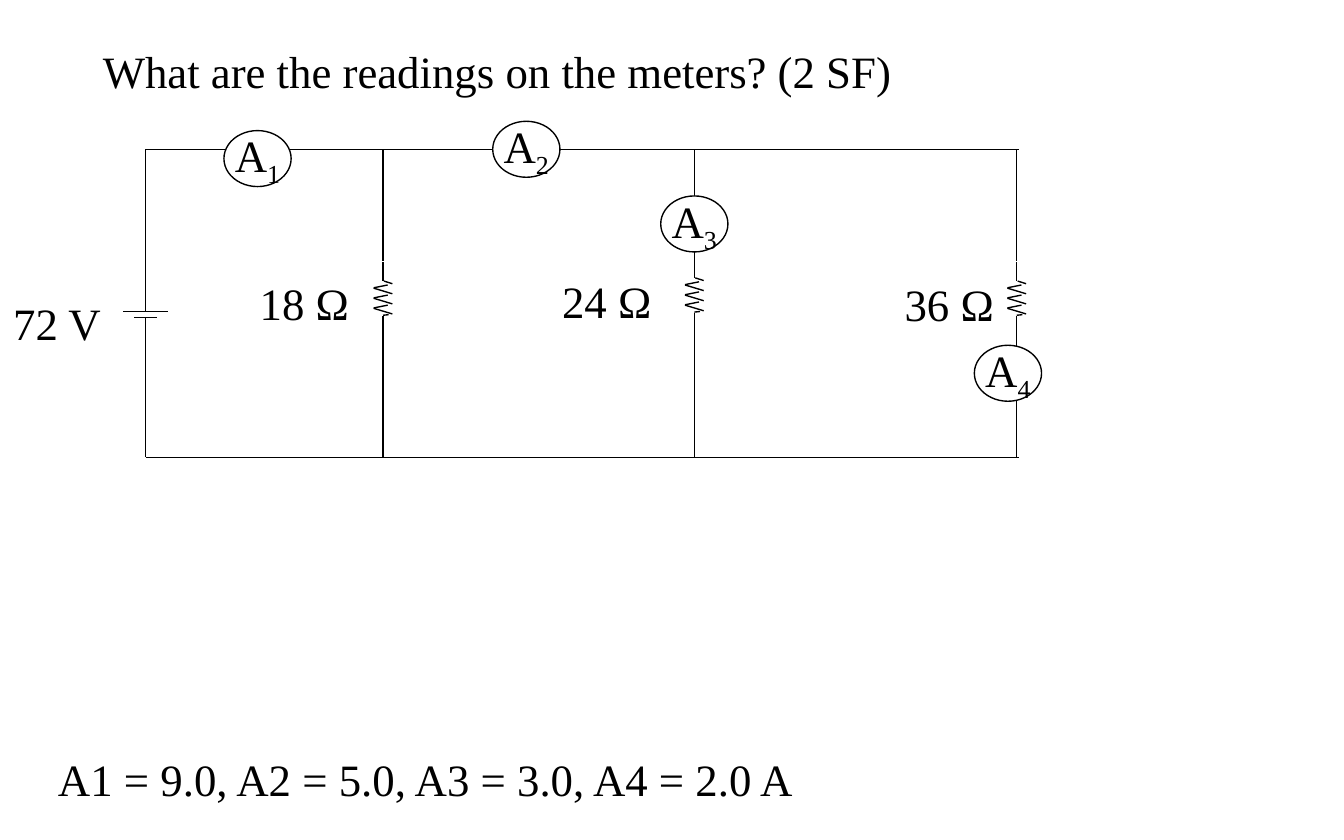
from dataclasses import dataclass

from lxml import etree
from pptx import Presentation
from pptx.dml.color import RGBColor
from pptx.enum.shapes import MSO_CONNECTOR, MSO_SHAPE
from pptx.enum.text import MSO_ANCHOR, MSO_AUTO_SIZE, PP_ALIGN
from pptx.oxml.ns import qn
from pptx.util import Pt

STRAIGHT = MSO_CONNECTOR.STRAIGHT
ELLIPSE = MSO_SHAPE.OVAL
MIDDLE = MSO_ANCHOR.MIDDLE
GROW = MSO_AUTO_SIZE.SHAPE_TO_FIT_TEXT
FIXED = MSO_AUTO_SIZE.NONE
CENTER = PP_ALIGN.CENTER


@dataclass(frozen=True)
class Theme:
    ink: RGBColor = RGBColor(0, 0, 0)
    paper: RGBColor = RGBColor(255, 255, 255)
    font: str = "Times New Roman"
    size: float = 24
    line: float = 0.75
    subscript: int = -25000


def apply(obj, values):
    for name, value in values.items():
        setattr(obj, name, value)


class Circuit:
    """Draws circuit elements on one slide, with lengths in points."""

    def __init__(self, slide, theme):
        self.s = slide
        self.theme = theme

    def run(self, p, text):
        r = p.add_run()
        r.text = text
        apply(r.font, {"name": self.theme.font, "size": Pt(self.theme.size)})
        r.font.color.rgb = self.theme.ink
        return r

    def stroke(self, line):
        line.color.rgb = self.theme.ink
        line.width = Pt(self.theme.line)

    def text(self, text, x, y, w, h=36.5):
        sp = self.s.shapes.add_textbox(Pt(x), Pt(y), Pt(w), Pt(h))
        tf = sp.text_frame
        apply(tf, {"word_wrap": False, "auto_size": GROW})
        self.run(tf.paragraphs[0], text)

    def wire(self, x1, y1, x2, y2):
        sp = self.s.shapes.add_connector(STRAIGHT, Pt(x1), Pt(y1), Pt(x2), Pt(y2))
        self.stroke(sp.line)
        etree.SubElement(sp._element.spPr, qn("a:effectLst"))

    def meter(self, number, x, y, w=36, h=30):
        """Ammeter: a circle with a subscripted A."""
        sp = self.s.shapes.add_shape(ELLIPSE, Pt(x), Pt(y), Pt(w), Pt(h))
        sp.shadow.inherit = False
        sp.fill.solid()
        sp.fill.fore_color.rgb = self.theme.paper
        self.stroke(sp.line)
        tf = sp.text_frame
        apply(tf, {"word_wrap": False, "auto_size": FIXED, "vertical_anchor": MIDDLE})
        p = tf.paragraphs[0]
        p.alignment = CENTER
        self.run(p, "A")
        r = self.run(p, str(number))
        r.font._element.set("baseline", str(self.theme.subscript))

    def resistor(self, x, y, turns=3, pitch=5.4):
        strokes = [(0, 0, 0, 10.1), (0.5, 10.1, 5, 11.5),
                   (3, 28.1, 0, 28.4), (0, 28.8, 0, 38.9)]
        for i in range(turns):
            dy = i * pitch
            strokes += [(2.5, 12.2 + dy, -5, 13.7 + dy),
                        (-5, 13.9 + dy, 5, 16.9 + dy)]
        for x1, y1, x2, y2 in strokes:
            self.wire(x + x1, y + y1, x + x2, y + y2)

    def battery(self, x, y, gap=3, lead=15):
        for half_width, plate_y, direction in ((12, y, -1), (6, y + gap, 1)):
            self.wire(x - half_width, plate_y, x + half_width, plate_y)
            self.wire(x, plate_y, x, plate_y + direction * lead)


def main():
    prs = Presentation()
    prs.slide_width, prs.slide_height = Pt(720), Pt(450)
    s = prs.slides.add_slide(prs.slide_layouts[6])
    c = Circuit(s, Theme())

    c.text("What are the readings on the meters? (2 SF)", 48, 20, 512, 41)
    c.text("A1 = 9.0, A2 = 5.0, A3 = 3.0, A4 = 2.0 A", 24, 399, 412)

    left, right, top, bottom = 78, 546, 80, 245
    for y in (top, bottom):
        c.wire(left, y, right, y)
    c.battery(left, 167)
    c.wire(left, top, left, 155)
    c.wire(left, 175, left, bottom)
    c.text("72 V", 0, 155, 62)

    # branch x, resistor top, label, label x, label y
    branches = [(205.2, 140.5, "18 Ω", 132, 144),
                (372, 138.8, "24 Ω", 294, 143.3),
                (544.7, 140.5, "36 Ω", 477.5, 144.9)]
    for x, y, label, label_x, label_y in branches:
        c.wire(x, top, x, 139.7)
        c.resistor(x, y)
        c.wire(x, 175, x, bottom)
        c.text(label, label_x, label_y, 63.4)

    meters = [(120, 70), (264, 65), (354, 105), (522, 185)]
    for number, (x, y) in enumerate(meters, 1):
        c.meter(number, x, y)

    prs.save("out.pptx")


if __name__ == "__main__":
    main()
